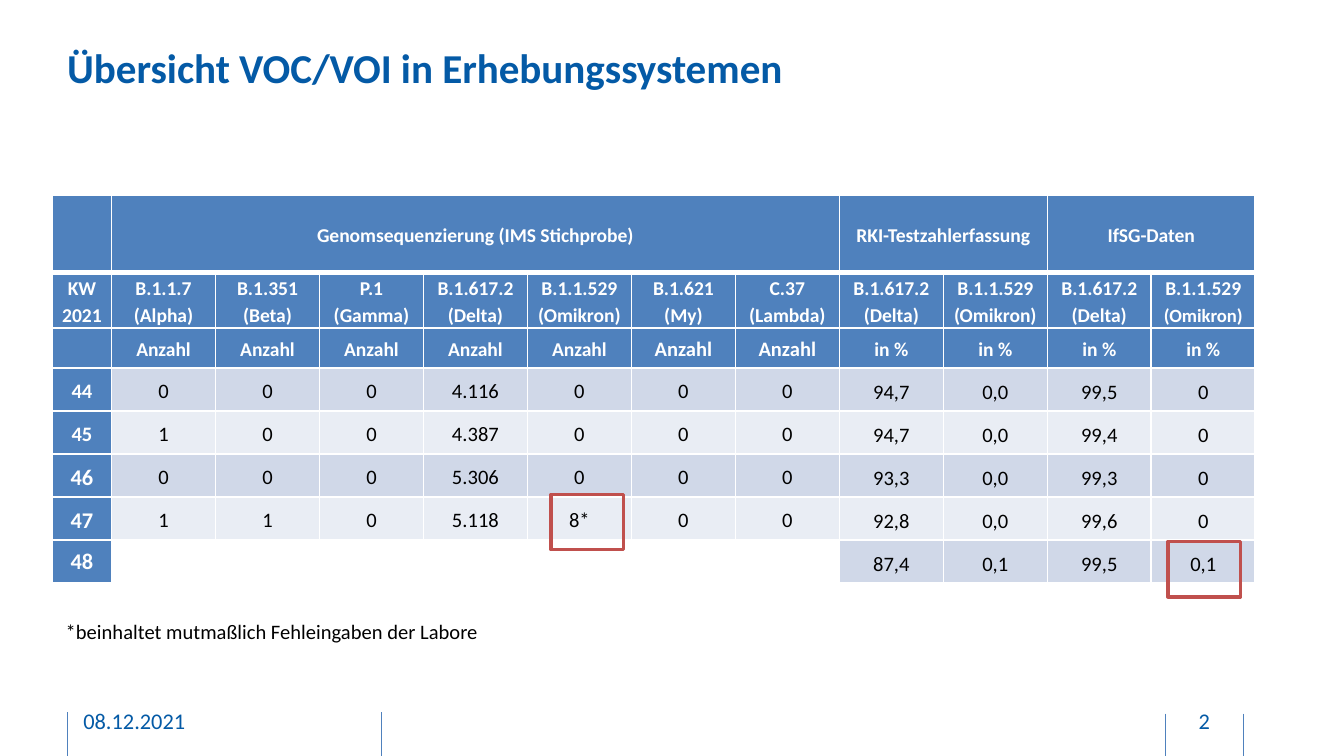
from lxml import etree
from pptx import Presentation
from pptx import util as u
from pptx.dml.color import RGBColor
from pptx.enum import shapes, text
from pptx.oxml.ns import qn

HUES = {"title": "045AA6", "head": "4F81BD", "dark": "D0D8E8", "light": "E9EDF4",
        "white": "FFFFFF", "black": "000000", "mark": "C0504D"}
MID = text.MSO_ANCHOR.MIDDLE
CENTER = text.PP_ALIGN.CENTER

TOP = {1: "Genomsequenzierung (IMS Stichprobe)", 8: "RKI-Testzahlerfassung", 10: "IfSG-Daten"}
SPANS = {1: 7, 8: 9, 10: 11}
NAMES = ["KW 2021", "B.1.1.7 (Alpha)", "B.1.351 (Beta)", "P.1 (Gamma)", "B.1.617.2 (Delta)",
         "B.1.1.529\n(Omikron)", "B.1.621\n(My)", "C.37\n(Lambda)", "B.1.617.2 (Delta)",
         "B.1.1.529 (Omikron)", "B.1.617.2 (Delta)", "B.1.1.529\n"]
UNITS = [""] + ["Anzahl"] * 7 + ["in %"] * 4
WEEKS = [
    ["44", "0", "0", "0", "4.116", "0", "0", "0", "94,7", "0,0", "99,5", "0"],
    ["45", "1", "0", "0", "4.387", "0", "0", "0", "94,7", "0,0", "99,4", "0"],
    ["46", "0", "0", "0", "5.306", "0", "0", "0", "93,3", "0,0", "99,3", "0"],
    ["47", "1", "1", "0", "5.118", "8*", "0", "0", "92,8", "0,0", "99,6", "0"],
    ["48"] + [""] * 7 + ["87,4", "0,1", "99,5", "0,1"],
]
HEADS = 3
WIDE = 8.95
COLS = [0.44] + [(WIDE - 0.44) / 11] * 11
ROWS = [0.58, 0.41, 0.3] + [0.32] * len(WEEKS)


def rgb(name):
    return RGBColor.from_string(HUES[name])


def write(frame, words, size=11, hue="black", bold=False, align=None, lead=None):
    """Add to the first paragraph; an empty one still gets its text size."""
    para = frame.paragraphs[0]
    para.alignment, para.line_spacing = align, lead
    if not words:
        etree.SubElement(para._p, qn("a:endParaRPr"), sz=str(int(size * 100)))
        return
    for n, part in enumerate(words.split("\n")):
        if n:
            para.add_line_break()
        if part:
            run = para.add_run()
            run.text = part
            font = run.font
            font.name, font.size, font.bold = "Calibri", u.Pt(size), bold
            font.color.rgb = rgb(hue)


def edge(cell, side, width):
    line = etree.SubElement(cell._tc.get_or_add_tcPr(), qn("a:" + side),
                            w=str(u.Pt(width)))
    fill = etree.SubElement(line, qn("a:solidFill"))
    etree.SubElement(fill, qn("a:srgbClr"), val=HUES["white"])


class Page:
    """Holds the slide and draws each kind of element in the house style."""

    def __init__(self, deck):
        self.slide = deck.slides.add_slide(deck.slide_layouts[6])
        self.shapes = self.slide.shapes

    def label(self, box, words, pad=(0, 0, 0, 0), wrap=True, anchor=MID, **form):
        frame = self.shapes.add_textbox(*map(u.Inches, box)).text_frame
        frame.word_wrap, frame.vertical_anchor = wrap, anchor
        (frame.margin_left, frame.margin_top,
         frame.margin_right, frame.margin_bottom) = map(u.Inches, pad)
        write(frame, words, **form)

    def rule(self, x, top, end):
        line = self.shapes.add_connector(shapes.MSO_CONNECTOR.STRAIGHT,
                                         *map(u.Inches, (x, top, x, end)))
        line.line.color.rgb, line.line.width = rgb("head"), u.Pt(0.5)
        etree.SubElement(line._element.spPr, qn("a:effectLst"))

    def frame(self, x, y):
        box = self.shapes.add_shape(shapes.MSO_SHAPE.RECTANGLE,
                                    *map(u.Inches, (x, y, 0.54, 0.41)))
        box.shadow.inherit = False
        box.fill.background()
        box.line.color.rgb, box.line.width = rgb("mark"), u.Pt(2)

    def cell(self, cell, row, col, words):
        head = row < HEADS or col == 0
        rate = col > 7 and not head
        cell.vertical_anchor = MID
        cell.margin_left = cell.margin_right = u.Inches(0.01 if rate else 0.05)
        cell.margin_top = u.Inches(0.01 if rate else 0)
        cell.margin_bottom = 0
        for side in ("lnL", "lnR", "lnT", "lnB"):
            thick = (row, side) in ((0, "lnB"), (1, "lnT"))
            edge(cell, side, 3 if thick else 1)
        if head or words:
            cell.fill.solid()
            hue = "head" if head else ("dark", "light")[(row - HEADS) % 2]
            cell.fill.fore_color.rgb = rgb(hue)
        else:
            cell.fill.background()
        size = 11
        if row >= HEADS + 2 and col == 0:
            size = 12
        elif row < HEADS and not (row == 2 and col in (6, 7)):
            size = 10.5
        write(cell.text_frame, words, size=size, bold=head, align=CENTER,
              hue="white" if head else "black", lead=None if words == "48" else 1.15)

    def table(self, x, y, data):
        grid = self.shapes.add_table(len(ROWS), len(COLS), u.Inches(x), u.Inches(y),
                                     u.Inches(WIDE), u.Inches(sum(ROWS))).table
        grid.first_row = grid.horz_banding = False
        for col, width in zip(grid.columns, COLS):
            col.width = u.Inches(width)
        for row, high in zip(grid.rows, ROWS):
            row.height = u.Inches(high)
        for r, line in enumerate(data):
            for c, words in enumerate(line):
                self.cell(grid.cell(r, c), r, c, words)
        for first, last in SPANS.items():
            grid.cell(0, first).merge(grid.cell(0, last))
        # The last heading has a smaller second line
        write(grid.cell(1, len(COLS) - 1).text_frame, "(Omikron)", size=10,
              hue="white", bold=True, align=CENTER, lead=1.15)


def main():
    deck = Presentation()
    deck.slide_width = u.Inches(10)
    deck.slide_height = deck.slide_width * 9 // 16
    page = Page(deck)
    for x, top in ((0.5, 5.3), (2.84, 5.3), (8.67, 5.31), (9.25, 5.31)):
        page.rule(x, top, top + 0.34)
    foot = dict(pad=(0, 0.05, 0, 0.05), size=12, hue="title")
    page.label((0.62, 5.21, 2.03, 0.3), "08.12.2021", **foot)
    page.label((8.69, 5.21, 0.54, 0.3), "2", align=CENTER, **foot)
    page.label((0.5, 0.11, 8.73, 0.78), "Übersicht VOC/VOI in Erhebungssystemen",
               size=22, hue="title", bold=True)
    top = [TOP.get(c, "") for c in range(len(COLS))]
    page.table(0.39, 1.45, [top, NAMES, UNITS] + WEEKS)
    page.frame(8.69, 4.03)
    page.frame(4.1, 3.68)
    page.label((0.39, 4.56, 3.29, 0.29), "*beinhaltet mutmaßlich Fehleingaben der Labore",
               pad=(0.1, 0.05, 0.1, 0.05), wrap=False, anchor=text.MSO_ANCHOR.TOP)
    deck.save("out.pptx")


if __name__ == "__main__":
    main()
